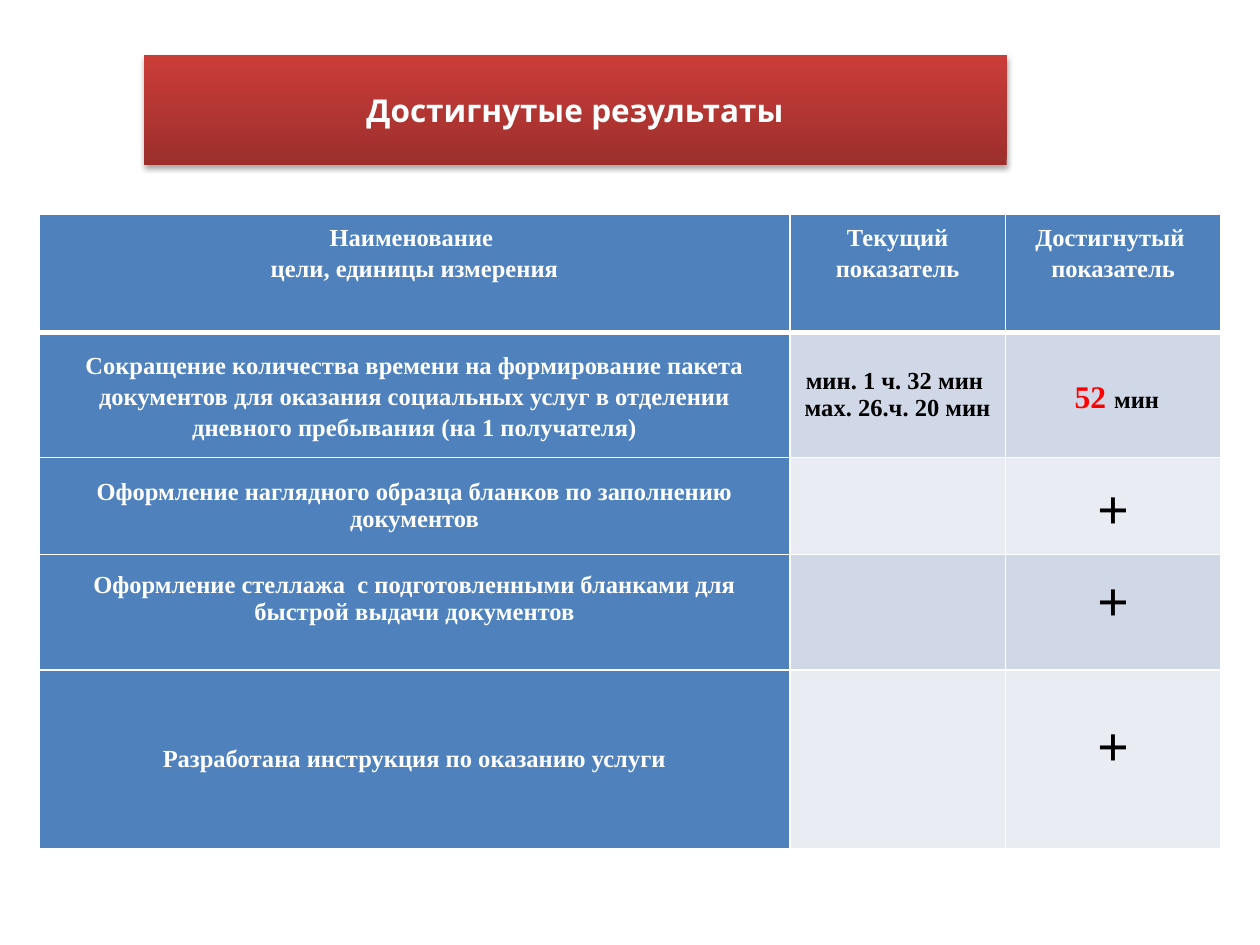
from lxml import etree
from pptx import Presentation
from pptx.dml.color import RGBColor
from pptx.enum import text
from pptx.oxml import parse_xml
from pptx.oxml.ns import nsdecls, qn
from pptx.util import Inches, Pt

COLORS = {"white": "FFFFFF", "black": "000000", "red": "FF0000", "blue": "4F81BD",
          "band_dark": "D0D8E7", "band_light": "E9ECF3",
          "title_bottom": "9C2F2C", "title_top": "CB3D39"}
TABLE_FONT = "Times New Roman"
COLUMNS = [5.96, 1.71, 1.71]
ROWS = [0.94, 0.99, 0.77, 0.92, 1.42]
HEADERS = [["Наименование ", "цели, единицы измерения"],
           ["Текущий показатель"],
           ["Достигнутый ", "показатель"]]
GOALS = [
    "Сокращение количества времени на формирование пакета документов для оказания "
    "социальных услуг в отделении дневного пребывания (на 1 получателя)",
    "Оформление наглядного образца бланков по заполнению документов",
    "Оформление стеллажа  с подготовленными бланками для быстрой выдачи документов",
    "Разработана инструкция по оказанию услуги",
]


def rgb(name):
    return RGBColor.from_string(COLORS[name])


def add_run(p, content, size=14, color="white", font=TABLE_FONT):
    r = p.add_run()
    r.text = content
    r.font.name, r.font.size, r.font.bold = font, Pt(size), True
    r.font.color.rgb = rgb(color)


def add_borders(cell, top=0.96, bottom=0.96):
    widths = {"L": 0.96, "R": 0.96, "T": top, "B": bottom}
    tcPr = cell._tc.get_or_add_tcPr()
    for i, (side, width) in enumerate(widths.items()):
        tcPr.insert(i, parse_xml(
            f'<a:ln{side} {nsdecls("a")} w="{Pt(width)}"><a:solidFill>'
            f'<a:srgbClr val="{COLORS["white"]}"/></a:solidFill></a:ln{side}>'))


def fill_cell(cell, paragraphs, spacing=1.0, middle=True, left=0.07, bottom=0.05):
    """Write paragraphs, each a list of (text, format) runs, into a table cell."""
    cell.margin_left, cell.margin_right = Inches(left), Inches(0.07)
    cell.margin_top, cell.margin_bottom = Inches(0.05), Inches(bottom)
    cell.vertical_anchor = text.MSO_ANCHOR.MIDDLE if middle else text.MSO_ANCHOR.TOP
    tf = cell.text_frame
    for i, runs in enumerate(paragraphs):
        p = tf.add_paragraph() if i else tf.paragraphs[0]
        p.alignment = text.PP_ALIGN.CENTER
        p.line_spacing = spacing
        for content, fmt in runs:
            add_run(p, content, **fmt)


def format_title(sp, left, top, width, height):
    sp.left, sp.top, sp.width, sp.height = map(Inches, (left, top, width, height))
    sp.fill.gradient()
    sp.fill.gradient_angle = 90
    for stop, position, name in zip(sp.fill.gradient_stops, (0, 1),
                                    ("title_bottom", "title_top")):
        stop.position = position
        stop.color.rgb = rgb(name)
    effects = etree.SubElement(sp._element.spPr, qn("a:effectLst"))
    effects.append(parse_xml(
        f'<a:outerShdw {nsdecls("a")} blurRad="{Pt(3.1)}" dist="{Pt(1.8)}" '
        'dir="5400000" rotWithShape="0"><a:srgbClr val="000000">'
        '<a:alpha val="35000"/></a:srgbClr></a:outerShdw>'))
    tf = sp.text_frame
    tf.vertical_anchor = text.MSO_ANCHOR.MIDDLE
    p = tf.paragraphs[0]
    p.alignment = text.PP_ALIGN.CENTER
    add_run(p, "Достигнутые результаты", size=18, font="League Spartan")


def add_results_table(s, left, top, width, height):
    table = s.shapes.add_table(len(ROWS), len(COLUMNS), *map(
        Inches, (left, top, width, height))).table
    for column, size in zip(table.columns, COLUMNS):
        column.width = Inches(size)
    for row, size in zip(table.rows, ROWS):
        row.height = Inches(size)

    for r in range(len(ROWS)):
        band = "band_dark" if r % 2 else "band_light"
        for c in range(len(COLUMNS)):
            cell = table.cell(r, c)
            cell.fill.solid()
            cell.fill.fore_color.rgb = rgb("blue" if r == 0 or c == 0 else band)
            add_borders(cell, top=3 if r == 1 else 0.96, bottom=3 if r == 0 else 0.96)

    for c, lines in enumerate(HEADERS):
        fill_cell(table.cell(0, c), [[(line, {})] for line in lines],
                  spacing=1.15, middle=False)
    for r, goal in enumerate(GOALS, 1):
        fill_cell(table.cell(r, 0), [[(goal, {})]], spacing=1.15 if r == 1 else 1.0,
                  bottom=0.27 if r == 3 else 0.05)

    black = {"color": "black"}
    fill_cell(table.cell(1, 1), [[("мин. 1 ч. 32 мин ", black)],
                                 [("мах. 26.ч. 20 мин", black)]])
    fill_cell(table.cell(1, 2), [[("52 ", {"size": 18, "color": "red"}),
                                  ("мин", black)]], spacing=1.15, left=0.13)
    for r, bottom in ((2, 0.05), (3, 0.28), (4, 0.31)):
        fill_cell(table.cell(r, 2), [[("+", {"size": 32, "color": "black"})]],
                  spacing=1.15, bottom=bottom)


def main():
    prs = Presentation()
    prs.slide_width, prs.slide_height = Inches(10), Inches(7.5)
    s = prs.slides.add_slide(prs.slide_layouts[5])
    format_title(s.shapes.title, 1.14, 0.44, 6.85, 0.87)
    add_results_table(s, 0.31, 1.7, sum(COLUMNS), sum(ROWS))
    prs.save("out.pptx")


if __name__ == "__main__":
    main()
